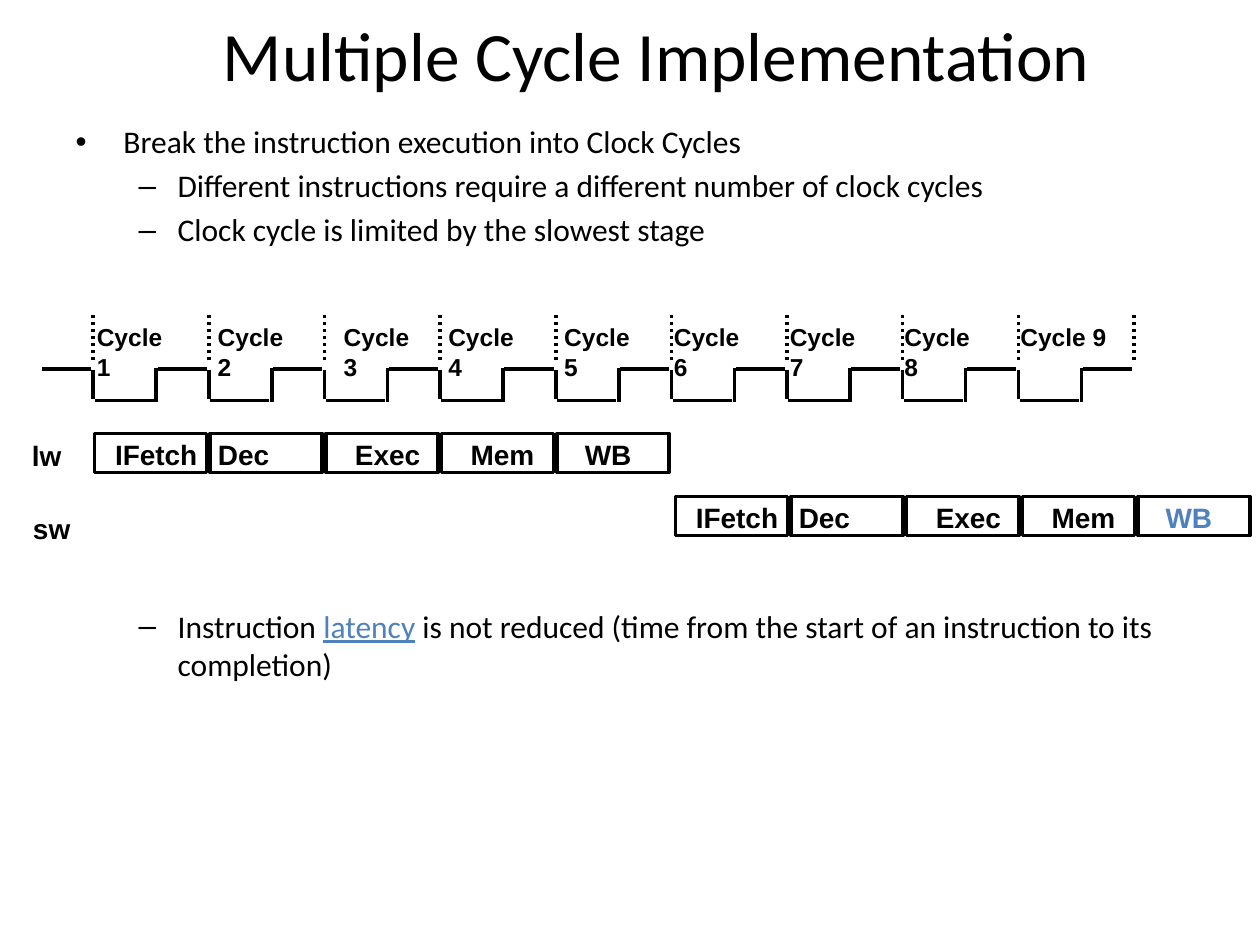
from dataclasses import dataclass

from pptx import Presentation
from pptx.dml.color import RGBColor
from pptx.enum.dml import MSO_LINE
from pptx.enum.shapes import MSO_CONNECTOR, MSO_SHAPE
from pptx.enum.text import MSO_ANCHOR, MSO_AUTO_SIZE, PP_ALIGN
from pptx.oxml.ns import qn
from pptx.util import Inches, Pt

STRAIGHT = MSO_CONNECTOR.STRAIGHT
RECTANGLE = MSO_SHAPE.RECTANGLE
DOTTED = MSO_LINE.ROUND_DOT
LEFT = PP_ALIGN.LEFT
CENTER = PP_ALIGN.CENTER
MIDDLE = MSO_ANCHOR.MIDDLE
NO_FIT = MSO_AUTO_SIZE.NONE


@dataclass(frozen=True)
class Theme:
    ink: RGBColor = RGBColor(0, 0, 0)
    accent: RGBColor = RGBColor(0x4F, 0x81, 0xBD)
    text_font: str = "Calibri"
    diagram_font: str = "Arial"
    title_size: float = 39.6
    body_size: float = 18
    stage_size: float = 16
    cycle_size: float = 14
    line_width: float = 2


CYCLE_COUNT = 9
CLOCK_LEFT = 0.74
CLOCK_RIGHT = 9
PITCH = (CLOCK_RIGHT - CLOCK_LEFT) / CYCLE_COUNT
HIGH_PHASE = (0.51, 2.93, 0.9, 2.93)
CYCLE_LINES = [
    (0.01, 3.18, 0.48, 3.18),
    (0, 2.94, 0, 3.17),
    (0.5, 3.19, 0.5, 2.92),
    HIGH_PHASE,
]
CYCLE_LABEL_LEFTS = [0.67, 1.63, 2.63, 3.46, 4.38, 5.25, 6.17, 7.08, 8]
STAGES = [
    ("IFetch", 0.06, 0.86),
    ("Dec", -0.04, 0.61),
    ("Exec", 0.13, 0.72),
    ("Mem", 0.13, 0.71),
    ("WB", 0.12, 0.57),
]
BULLETS = [
    (0, 3.6, ["Break the instruction execution into Clock Cycles"]),
    (1, 3.6, ["Different instructions require a different number of clock cycles"]),
    (1, 3.6, ["Clock cycle is limited by the slowest stage"]),
    (1, 205, ["Instruction ", "latency",
              " is not reduced (time from the start of an instruction to its completion)"]),
]
INDENTS = [(0.38, -0.38), (0.81, -0.31)]
HIGHLIGHT = "latency"


class SlideBuilder:
    def __init__(self, slide, theme):
        self.slide = slide
        self.theme = theme

    def set_font(self, para, name, size, color, bold=False):
        para.font.name = name
        para.font.size = Pt(size)
        para.font.bold = bold
        para.font.color.rgb = color

    def place(self, shape, left, top, width, height):
        shape.left, shape.top = Inches(left), Inches(top)
        shape.width, shape.height = Inches(width), Inches(height)
        shape.text_frame.auto_size = NO_FIT

    def title(self, text):
        box = self.slide.shapes.title
        self.place(box, 0.83, 0.17, 8.76, 0.52)
        box.text_frame.vertical_anchor = MIDDLE
        para = box.text_frame.paragraphs[0]
        para.text = text
        para.alignment = CENTER
        self.set_font(para, self.theme.text_font, self.theme.title_size, self.theme.ink)

    def bullets(self, items):
        box = self.slide.placeholders[1]
        self.place(box, 0.5, 0.92, 9.08, 5.04)
        frame = box.text_frame
        for index, (level, gap, parts) in enumerate(items):
            para = frame.add_paragraph() if index else frame.paragraphs[0]
            para.level = level
            para.space_before = Pt(gap)
            margin, indent = INDENTS[level]
            properties = para._p.get_or_add_pPr()
            properties.set("marL", str(Inches(margin)))
            properties.set("indent", str(Inches(indent)))
            self.set_font(para, self.theme.text_font, self.theme.body_size, self.theme.ink)
            for part in parts:
                span = para.add_run()
                span.text = part
                if part == HIGHLIGHT:
                    span.font.underline = True
                    span.font.color.rgb = self.theme.accent

    def line(self, x1, y1, x2, y2, dash=None):
        connector = self.slide.shapes.add_connector(
            STRAIGHT, Inches(x1), Inches(y1), Inches(x2), Inches(y2))
        connector.line.color.rgb = self.theme.ink
        connector.line.width = Pt(self.theme.line_width)
        if dash is not None:
            connector.line.dash_style = dash
        properties = connector._element.spPr
        properties.append(properties.makeelement(qn("a:effectLst"), {}))

    def frame(self, left, top, width, height):
        box = self.slide.shapes.add_shape(
            RECTANGLE, Inches(left), Inches(top), Inches(width), Inches(height))
        box.shadow.inherit = False
        box.fill.background()
        box.line.color.rgb = self.theme.ink
        box.line.width = Pt(self.theme.line_width)

    def label(self, text, left, top, width, height, size, align=CENTER, color=None, wrap=False):
        box = self.slide.shapes.add_textbox(
            Inches(left), Inches(top), Inches(width), Inches(height))
        box.text_frame.word_wrap = wrap
        para = box.text_frame.paragraphs[0]
        para.text = text
        para.alignment = align
        self.set_font(para, self.theme.diagram_font, size, color or self.theme.ink, bold=True)

    def clock(self):
        def shifted(cycle, segment):
            x1, y1, x2, y2 = segment
            start = CLOCK_LEFT + cycle * PITCH
            return start + x1, y1, start + x2, y2

        self.line(*shifted(-1, HIGH_PHASE))
        for cycle in range(CYCLE_COUNT):
            for segment in CYCLE_LINES:
                self.line(*shifted(cycle, segment))
        for edge in range(CYCLE_COUNT + 1):
            self.line(*shifted(edge, (0, 2.86, 0, 2.5)), dash=DOTTED)
        for number, left in enumerate(CYCLE_LABEL_LEFTS, 1):
            width = 0.9 if number == CYCLE_COUNT else 0.86
            self.label(f"Cycle {number}", left, 2.51, width, 0.33,
                       self.theme.cycle_size, align=LEFT, wrap=True)

    def instruction(self, name, name_box, left, top, unused=()):
        size = self.theme.stage_size
        self.label(name, *name_box, size)
        for index, (stage, offset, width) in enumerate(STAGES):
            stage_left = left + index * PITCH
            color = self.theme.accent if stage in unused else self.theme.ink
            self.frame(stage_left, top, 0.89, 0.31)
            self.label(stage, stage_left + offset, top - 0.02, width, 0.37, size, color=color)


def main():
    deck = Presentation()
    deck.slide_width, deck.slide_height = Inches(10), Inches(7.5)
    page = deck.slides.add_slide(deck.slide_layouts[1])
    builder = SlideBuilder(page, Theme())
    builder.title("Multiple Cycle Implementation")
    builder.bullets(BULLETS)
    builder.clock()
    builder.instruction("lw", (0.15, 3.43, 0.44, 0.37), 0.75, 3.44)
    builder.instruction("sw", (0.16, 4.01, 0.5, 0.37), 5.36, 3.94, unused=("WB",))
    deck.save("out.pptx")


if __name__ == "__main__":
    main()
